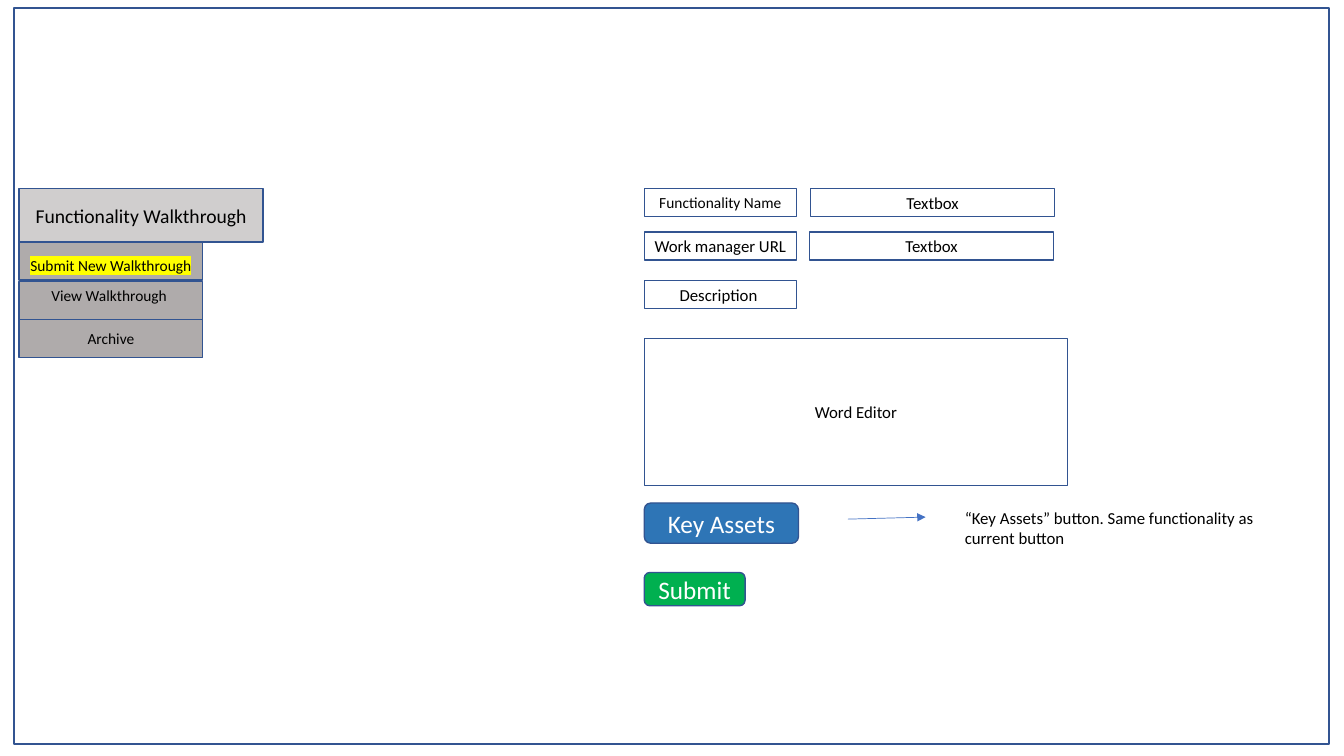
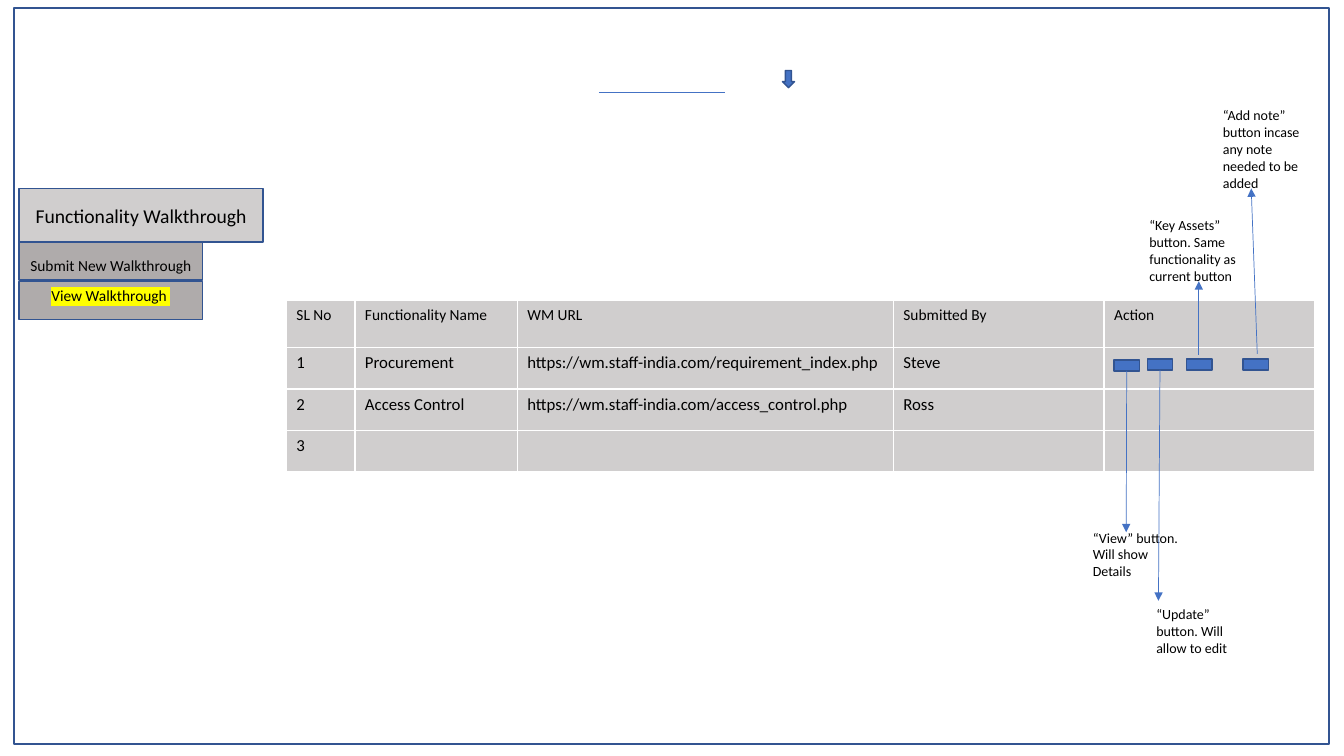
from lxml import etree
from pptx import Presentation
from pptx.dml.color import RGBColor
from pptx.enum import shapes, text
from pptx.oxml import ns
from pptx.util import Inches, Pt

COLORS = {
    "ink": "000000",
    "white": "FFFFFF",
    "outline": "325491",
    "accent": "4472C4",
    "light": "D0CECE",
    "menu": "AFABAB",
    "key": "2E75B6",
    "submit": "00B050",
    "highlight": "FFFF00",
}
FONT = "Calibri"
RECT = shapes.MSO_SHAPE.RECTANGLE
ROUND = shapes.MSO_SHAPE.ROUNDED_RECTANGLE
DOWN = shapes.MSO_SHAPE.DOWN_ARROW
TOP = text.MSO_ANCHOR.TOP
MIDDLE = text.MSO_ANCHOR.MIDDLE
KEY_NOTE = "“Key Assets” button. Same functionality as current button"


def rgb(name):
    return RGBColor.from_string(COLORS[name])


class Wireframe:
    """Holds the shared style and draws on the current slide."""

    def __init__(self, prs):
        self.prs = prs
        self.s = None

    def new_slide(self):
        self.s = self.prs.slides.add_slide(self.prs.slide_layouts[6])
        self.box((0.14, 0.08, 13.04, 7.3))

    def run(self, p, words, size, color="ink", highlight=False):
        r = p.add_run()
        r.text = words
        r.font.name = FONT
        r.font.size = Pt(size)
        r.font.bold = False
        r.font.color.rgb = rgb(color)
        if highlight:
            mark = etree.Element(ns.qn("a:highlight"))
            etree.SubElement(mark, ns.qn("a:srgbClr"), val=COLORS["highlight"])
            r._r.rPr.find(ns.qn("a:latin")).addprevious(mark)

    def box(self, at, words="", size=12, fill=None, color="ink", kind=RECT,
            anchor=MIDDLE, highlight=False, parent=None):
        sp = (parent or self.s).shapes.add_shape(kind, *map(Inches, at))
        sp.shadow.inherit = False
        if fill:
            sp.fill.solid()
            sp.fill.fore_color.rgb = rgb(fill)
        else:
            sp.fill.background()
        sp.line.color.rgb = rgb("outline")
        sp.line.width = Pt(1)
        if words:
            tf = sp.text_frame
            tf.vertical_anchor = anchor
            p = tf.paragraphs[0]
            p.alignment = text.PP_ALIGN.CENTER
            self.run(p, words, size, color, highlight)
        return sp

    def note(self, at, words, size):
        tf = self.s.shapes.add_textbox(*map(Inches, at)).text_frame
        tf.word_wrap = True
        tf.auto_size = text.MSO_AUTO_SIZE.SHAPE_TO_FIT_TEXT
        self.run(tf.paragraphs[0], words, size)

    def line(self, start, end, arrow=True, source=None):
        c = self.s.shapes.add_connector(
            shapes.MSO_CONNECTOR.STRAIGHT, *map(Inches, start + end))
        if source:
            c.begin_connect(source, 2)
        c.line.color.rgb = rgb("accent")
        c.line.width = Pt(0.5)
        props = c.element.spPr
        if arrow:
            etree.SubElement(props.find(ns.qn("a:ln")), ns.qn("a:tailEnd"), type="triangle")
        etree.SubElement(props, ns.qn("a:effectLst"))

    def menu(self, active, archive=False):
        group = self.s.shapes.add_group_shape()
        self.box((0.19, 1.87, 2.42, 0.53), "Functionality Walkthrough", 14, "light", parent=group)
        items = [("Submit New Walkthrough", 2.4, MIDDLE), ("View Walkthrough ", 2.79, TOP)]
        if archive:
            items.append(("Archive", 3.17, MIDDLE))
        for i, (words, top, anchor) in enumerate(items):
            sp = self.box((0.19, top, 1.82, 0.38), words, 11, "menu", anchor=anchor,
                          highlight=i == active, parent=group)
            if i == 0:
                self.run(sp.text_frame.paragraphs[0], " ", 18)

    def table(self, at, widths, heights, rows):
        shape = self.s.shapes.add_table(
            len(rows), len(widths), *map(Inches, at + (sum(widths), sum(heights))))
        table = shape.table
        for column, width in zip(table.columns, widths):
            column.width = Inches(width)
        for i, (row, height) in enumerate(zip(rows, heights)):
            table.rows[i].height = Inches(height)
            for j, words in enumerate(row):
                cell = table.cell(i, j)
                cell.fill.solid()
                cell.fill.fore_color.rgb = rgb("light")
                p = cell.text_frame.paragraphs[0]
                if words:
                    self.run(p, words, 12 if i else 11)
                else:
                    p.font.size = Pt(12)


def submit_page(w):
    w.new_slide()
    w.menu(active=0, archive=True)
    left = 6.39
    fields = [("Functionality Name", 11, 1.87), ("Work manager URL", 12, 2.3),
              ("Description ", 12, 2.78)]
    for label, size, top in fields:
        w.box((left, top, 1.51, 0.28), label, size)
    for x, top in ((8.04, 1.87), (8.03, 2.3)):
        w.box((x, top, 2.42, 0.28), "Textbox")
    w.box((left, 3.36, 4.2, 1.46), "Word Editor")
    w.line((8.41, 5.15), (9.18, 5.13))
    w.note((9.47, 4.99, 3.11, 0.5), KEY_NOTE, 12)
    w.box((left, 4.99, 1.53, 0.4), "Key Assets", 18, "key", "white", ROUND)
    w.box((left, 5.68, 1, 0.33), "Submit", 18, "submit", "white", ROUND)


def view_page(w):
    w.new_slide()
    w.menu(active=1)
    w.table((2.84, 2.98), (0.68, 1.61, 3.73, 2.09, 2.09), (0.47, 0.41, 0.41, 0.41), [
        ("SL No", "Functionality Name", "WM URL", "Submitted By", "Action"),
        ("1", "Procurement", "https://wm.staff-india.com/requirement_index.php", "Steve", ""),
        ("2", "Access Control", "https://wm.staff-india.com/access_control.php", "Ross", ""),
        ("3", "", "", "", ""),
    ])
    w.line((5.94, 0.92), (7.19, 0.92), arrow=False)
    w.box((7.76, 0.7, 0.12, 0.17), fill="accent", kind=DOWN)
    view, update, _, _ = [
        w.box((x, y, 0.25, 0.11), fill="accent")
        for x, y in ((11.05, 3.57), (11.38, 3.56), (11.77, 3.56), (12.33, 3.56))]
    actions = [
        ((11.17, 3.67), (11.17, 5.28), view, (10.74, 5.2, 1.11, 0.61),
         "“View” button. Will show Details"),
        ((11.51, 3.69), (11.49, 5.96), update, (11.37, 5.96, 1.11, 0.61),
         "“Update” button. Will allow to edit"),
        ((11.89, 3.52), (11.89, 2.79), None, (11.3, 2.1, 1.11, 0.77), KEY_NOTE),
        ((12.47, 3.51), (12.41, 1.87), None, (12.03, 1.01, 1.11, 0.94),
         "“Add note” button incase any note needed to be added"),
    ]
    for start, end, source, at, words in actions:
        w.line(start, end, source=source)
        w.note(at, words, 10)


def main():
    prs = Presentation()
    prs.slide_width, prs.slide_height = Inches(13.33), Inches(7.5)
    w = Wireframe(prs)
    submit_page(w)
    view_page(w)
    prs.save("out.pptx")


if __name__ == "__main__":
    main()
